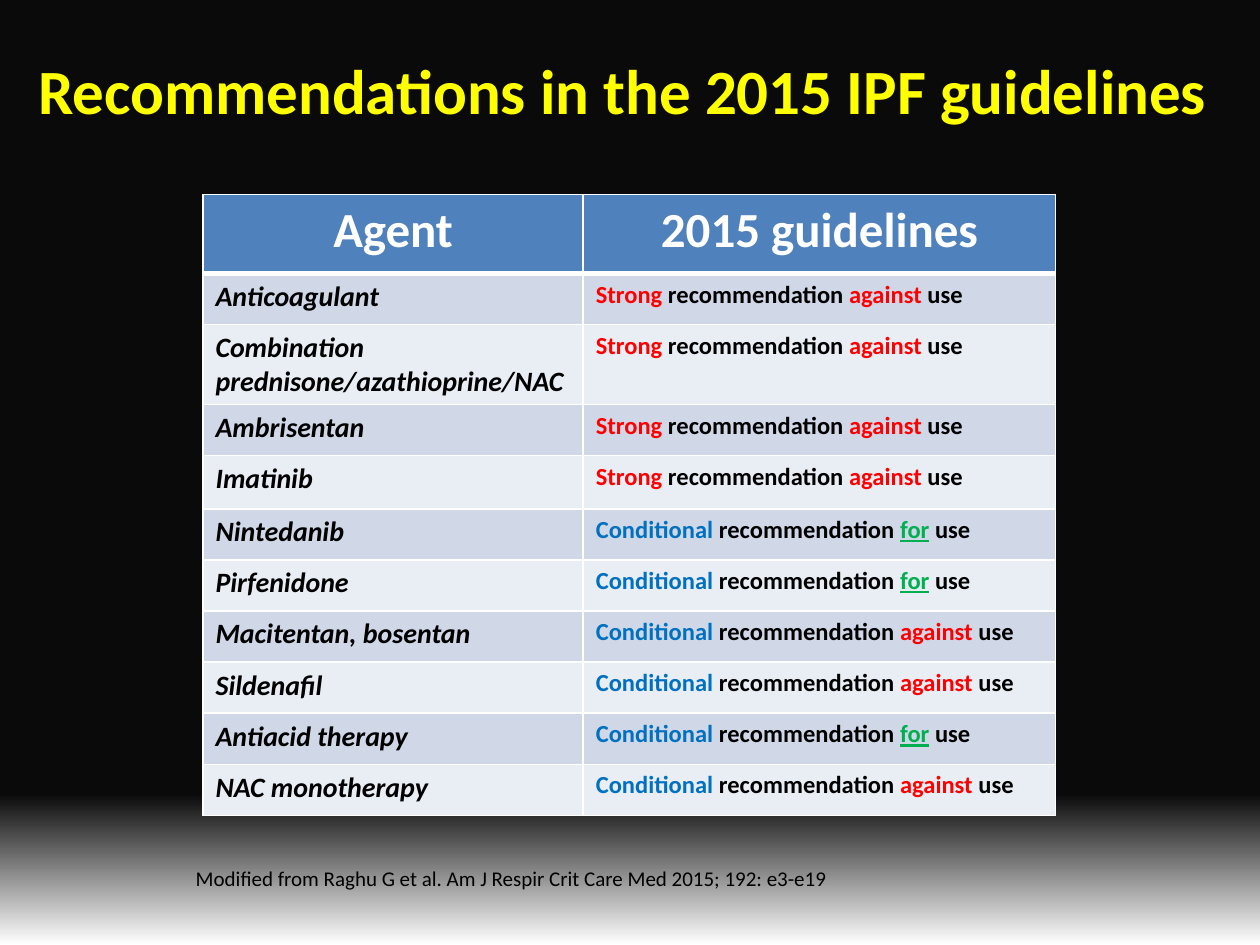
from lxml import etree
from pptx import Presentation
from pptx import util as u
from pptx.dml.color import RGBColor
from pptx.enum import text
from pptx.oxml import ns

Pt = u.Pt
BLACK, WHITE, RED, BLUE, GREEN = "000000", "FFFFFF", "FF0000", "0070C0", "00B050"
HEAD, BANDS = "4F81BD", ("D0D8E8", "E9EDF4")


def tint(code):
    return RGBColor.from_string(code)


class Deck:
    font = "Calibri"

    def __init__(self, wide, high):
        self.show = Presentation()
        self.show.slide_width, self.show.slide_height = Pt(wide), Pt(high)
        self.slide = self.show.slides.add_slide(self.show.slide_layouts[6])

    def back(self, stops, angle):
        fill = self.slide.background.fill
        fill.gradient()
        fill.gradient_angle = angle
        for stop, (place, color) in zip(fill.gradient_stops, stops):
            stop.position = place
            stop.color.rgb = tint(color)

    def run(self, para, words, size, color, bold=False, slant=False, under=False):
        run = para.add_run()
        run.text = words
        font = run.font
        font.name, font.size, font.color.rgb = self.font, Pt(size), tint(color)
        font.bold, font.italic, font.underline = bold, slant, under

    def label(self, box, words, size, color, bold=False, center=False, wrap=True):
        frame = self.slide.shapes.add_textbox(*map(Pt, box)).text_frame
        frame.word_wrap = wrap
        frame.auto_size = text.MSO_AUTO_SIZE.SHAPE_TO_FIT_TEXT
        para = frame.paragraphs[0]
        if center:
            para.alignment = text.PP_ALIGN.CENTER
        self.run(para, words, size, color, bold)

    def edge(self, cell, side, width):
        props = cell._tc.get_or_add_tcPr()
        line = etree.SubElement(props, ns.qn("a:" + side), w=str(Pt(width)))
        fill = etree.SubElement(line, ns.qn("a:solidFill"))
        etree.SubElement(fill, ns.qn("a:srgbClr"), val=WHITE)

    def cell(self, cell, runs, fill, top=1, base=1, center=False):
        for side, width in (("lnL", 1), ("lnR", 1), ("lnT", top), ("lnB", base)):
            self.edge(cell, side, width)
        cell.fill.solid()
        cell.fill.fore_color.rgb = tint(fill)
        para = cell.text_frame.paragraphs[0]
        if center:
            para.alignment = text.PP_ALIGN.CENTER
        for words, size, color, *style in runs:
            self.run(para, words, size, color, True, *style)

    def table(self, left, top, cols, highs, heads, rows):
        grid = self.slide.shapes.add_table(
            len(highs), len(cols), Pt(left), Pt(top), Pt(sum(cols)), Pt(sum(highs))
        ).table
        for col, width in zip(grid.columns, cols):
            col.width = Pt(width)
        for row, high in zip(grid.rows, highs):
            row.height = Pt(high)
        for c, words in enumerate(heads):
            self.cell(grid.cell(0, c), [(words, 28, WHITE)], HEAD, base=3, center=True)
        for r, row in enumerate(rows, 1):
            for c, runs in enumerate(row):
                self.cell(grid.cell(r, c), runs, BANDS[(r - 1) % 2], top=3 if r == 1 else 1)


def advice(grade, stance):
    runs = [
        (grade, 14, RED if grade == "Strong" else BLUE),
        (" recommendation ", 14, BLACK),
    ]
    if stance == "for":
        runs += [("for", 14, GREEN, False, True), (" ", 14, GREEN)]
    else:
        runs.append(("against ", 14, RED))
    return runs + [("use", 14, BLACK)]


AGENTS = [
    ("Anticoagulant", "Strong", "against"),
    ("Combination prednisone/azathioprine/NAC", "Strong", "against"),
    ("Ambrisentan", "Strong", "against"),
    ("Imatinib", "Strong", "against"),
    ("Nintedanib", "Conditional", "for"),
    ("Pirfenidone", "Conditional", "for"),
    ("Macitentan, bosentan", "Conditional", "against"),
    ("Sildenafil", "Conditional", "against"),
    ("Antiacid therapy", "Conditional", "for"),
    ("NAC monotherapy", "Conditional", "against"),
]


def main():
    deck = Deck(720, 540)
    deck.back([(0.84, "0A0A0A"), (1, WHITE)], 270)
    deck.label((8.6, 26, 702.7, 51), "Recommendations in the 2015 IPF guidelines ",
               36, "FFFF00", bold=True, center=True)
    rows = [([(agent, 16, BLACK, True)], advice(grade, stance))
            for agent, grade, stance in AGENTS]
    highs = [45, 29.2, 36, 29.2, 30.5] + [29.2] * 6
    deck.table(116, 111.3, (217.3, 270), highs, ("Agent", "2015 guidelines"), rows)
    deck.label((104.8, 491, 385, 21.8),
               "Modified from Raghu G et al. Am J Respir Crit Care Med 2015; 192: e3-e19",
               12, BLACK, wrap=False)
    deck.show.save("out.pptx")


if __name__ == "__main__":
    main()
